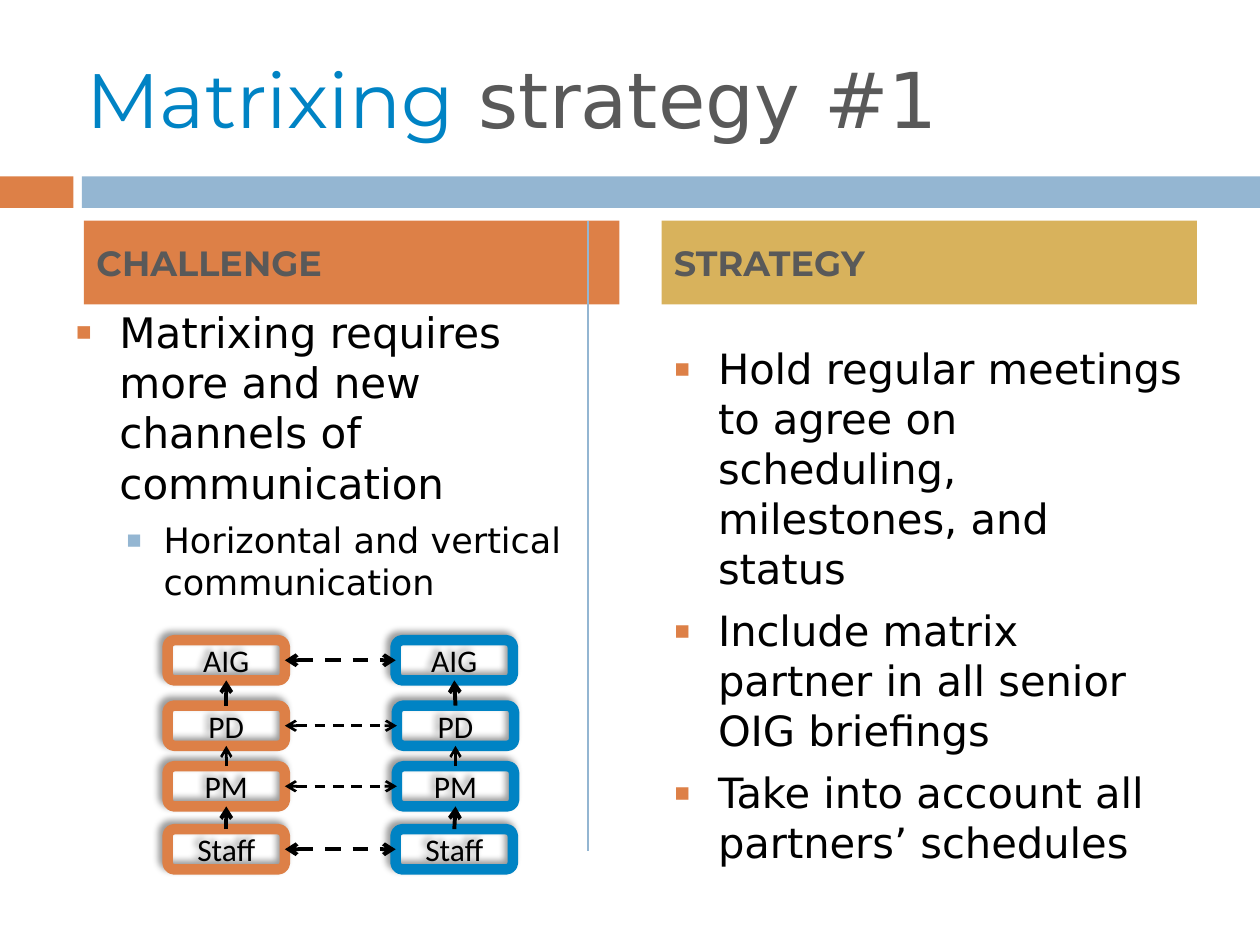
from lxml.etree import SubElement
from pptx import Presentation
from pptx.dml.color import RGBColor
from pptx.enum.dml import MSO_LINE
from pptx.enum.shapes import MSO_CONNECTOR, MSO_SHAPE
from pptx.enum.text import MSO_ANCHOR, MSO_AUTO_SIZE, PP_ALIGN
from pptx.oxml.ns import qn
from pptx.util import Pt

ORANGE, BLUE, SKY, GOLD = "DD8047", "0083C4", "94B6D2", "D8B25C"
GREY, BLACK = "595959", "000000"
HEAD_FONT, BODY_FONT, BOX_FONT = "Montserrat", "DejaVu Sans", "Calibri"

# Content
TITLE = [("Matrixing", HEAD_FONT, BLUE), (" strategy #1", BODY_FONT, GREY)]
BARS = [(0, 42, ORANGE), (46.8, 673.2, SKY)]  # left, width, fill
HEADERS = [("CHALLENGE", 48, ORANGE), ("STRATEGY", 378, GOLD)]
# Bullets: level, text, size, space before
CHALLENGE = [
    (0, "Matrixing requires more and new channels of communication", 24, 12),
    (1, "Horizontal and vertical communication", 20, 6),
]
STRATEGY = [(0, text, 23.8, 7) for text in (
    "Hold regular meetings to agree on scheduling, milestones, and status",
    "Include matrix partner in all senior OIG briefings",
    "Take into account all partners’ schedules",
)]
BODIES = [((36, 171.4, 300.2, 311), CHALLENGE), ((378, 192.2, 306, 282.2), STRATEGY)]
# Bullet levels: margin, hanging indent, colour, size percent
LEVELS = [(25.2, -25.2, ORANGE, 60), (50.4, -21.6, SKY, 70)]
# Chain of command: label, top, left of partner box, is an outer row
ROWS = [("AIG", 365.8, 226.1, True), ("PD", 403.2, 226.8, False),
        ("PM", 437.8, 226.8, False), ("Staff", 473.8, 226.1, True)]
BOX_LEFT, BOX_W, BOX_H = 95.8, 67, 23
TOP, LEFT, BOTTOM, RIGHT = range(4)  # connection sites


def rgb(color):
    return RGBColor.from_string(color)


def add_run(p, text, font, size, color, bold=False):
    r = p.add_run()
    r.text = text
    r.font.name, r.font.size, r.font.bold = font, Pt(size), bold
    r.font.color.rgb = rgb(color)


def add_shape(kind, left, top, width, height, fill=None):
    sp = s.shapes.add_shape(kind, Pt(left), Pt(top), Pt(width), Pt(height))
    sp.shadow.inherit = False
    sp.line.fill.background()
    if fill:
        sp.fill.solid()
        sp.fill.fore_color.rgb = rgb(fill)
    else:
        sp.fill.background()
    return sp


def add_bullet(p, level):
    margin, indent, color, percent = LEVELS[level]
    pPr = p._p.get_or_add_pPr()
    pPr.set("marL", str(Pt(margin)))
    pPr.set("indent", str(Pt(indent)))
    SubElement(SubElement(pPr, qn("a:buClr")), qn("a:srgbClr"), val=color)
    SubElement(pPr, qn("a:buSzPct"), val=str(percent * 1000))
    SubElement(pPr, qn("a:buFont"), typeface=BODY_FONT)
    SubElement(pPr, qn("a:buChar"), char="▪")


def add_box(label, left, top, color):
    sp = add_shape(MSO_SHAPE.ROUNDED_RECTANGLE, left, top, BOX_W, BOX_H)
    sp.line.color.rgb = rgb(color)
    sp.line.width = Pt(6)
    effects = sp._element.spPr.find(qn("a:effectLst"))
    shadow = SubElement(effects, qn("a:outerShdw"), blurRad=str(Pt(4)), dist=str(Pt(3)),
                        dir=str(225 * 60000), algn="br", rotWithShape="0")
    clr = SubElement(shadow, qn("a:srgbClr"), val=BLACK)
    SubElement(clr, qn("a:alpha"), val="40000")
    tf = sp.text_frame
    tf.vertical_anchor = MSO_ANCHOR.MIDDLE
    p = tf.paragraphs[0]
    p.alignment = PP_ALIGN.CENTER
    add_run(p, label, BOX_FONT, 18, BLACK)
    return sp


def add_line(color, width, x1=0, y1=0, x2=0, y2=0):
    cn = s.shapes.add_connector(MSO_CONNECTOR.STRAIGHT, Pt(x1), Pt(y1), Pt(x2), Pt(y2))
    cn.line.color.rgb = rgb(color)
    cn.line.width = Pt(width)
    SubElement(cn._element.spPr, qn("a:effectLst"))
    return cn


def join(start, start_site, end, end_site, heavy, both_ways=False):
    cn = add_line(BLACK, 2.25 if heavy else 1.5)
    cn.begin_connect(start, start_site)
    cn.end_connect(end, end_site)
    if both_ways:
        cn.line.dash_style = MSO_LINE.DASH
    for tag in ("a:headEnd", "a:tailEnd") if both_ways else ("a:tailEnd",):
        SubElement(cn.line._get_or_add_ln(), qn(tag), type="arrow")


prs = Presentation()
prs.slide_width, prs.slide_height = Pt(720), Pt(540)
s = prs.slides.add_slide(prs.slide_layouts[5])

# Title
title = s.shapes.title
title.left, title.top, title.width, title.height = Pt(42), Pt(21.6), Pt(642), Pt(68.4)
tf = title.text_frame
tf.auto_size = MSO_AUTO_SIZE.NONE
tf.vertical_anchor = MSO_ANCHOR.MIDDLE
tf.paragraphs[0].alignment = PP_ALIGN.LEFT
for text, font, color in TITLE:
    add_run(tf.paragraphs[0], text, font, 44, color)

# Bars under the title
for left, width, fill in BARS:
    add_shape(MSO_SHAPE.RECTANGLE, left, 100.8, width, 18, fill)

# Column headers
for text, left, fill in HEADERS:
    tf = add_shape(MSO_SHAPE.RECTANGLE, left, 126, 306, 48, fill).text_frame
    tf.vertical_anchor = MSO_ANCHOR.MIDDLE
    p = tf.paragraphs[0]
    p.alignment = PP_ALIGN.LEFT
    add_run(p, text, HEAD_FONT, 20, GREY, bold=True)

# Column bullets
for place, bullets in BODIES:
    tf = s.shapes.add_textbox(*map(Pt, place)).text_frame
    tf.word_wrap = True
    for i, (level, text, size, before) in enumerate(bullets):
        p = tf.add_paragraph() if i else tf.paragraphs[0]
        p.level = level
        p.space_before = Pt(before)
        add_bullet(p, level)
        add_run(p, text, BODY_FONT, size, BLACK)

# Divider
add_line(SKY, 0.79, 336, 126, 336, 486)

# Chain of command, joined across and upwards
pairs = [(add_box(label, BOX_LEFT, top, ORANGE), add_box(label, partner_left, top, BLUE))
         for label, top, partner_left, outer in ROWS]
for i, (own, partner) in enumerate(pairs):
    outer = ROWS[i][3]
    join(own, RIGHT, partner, LEFT, outer, both_ways=True)
    if i:
        for lower, upper in zip(pairs[i], pairs[i - 1]):
            join(lower, TOP, upper, BOTTOM, outer or ROWS[i - 1][3])

prs.save("out.pptx")
